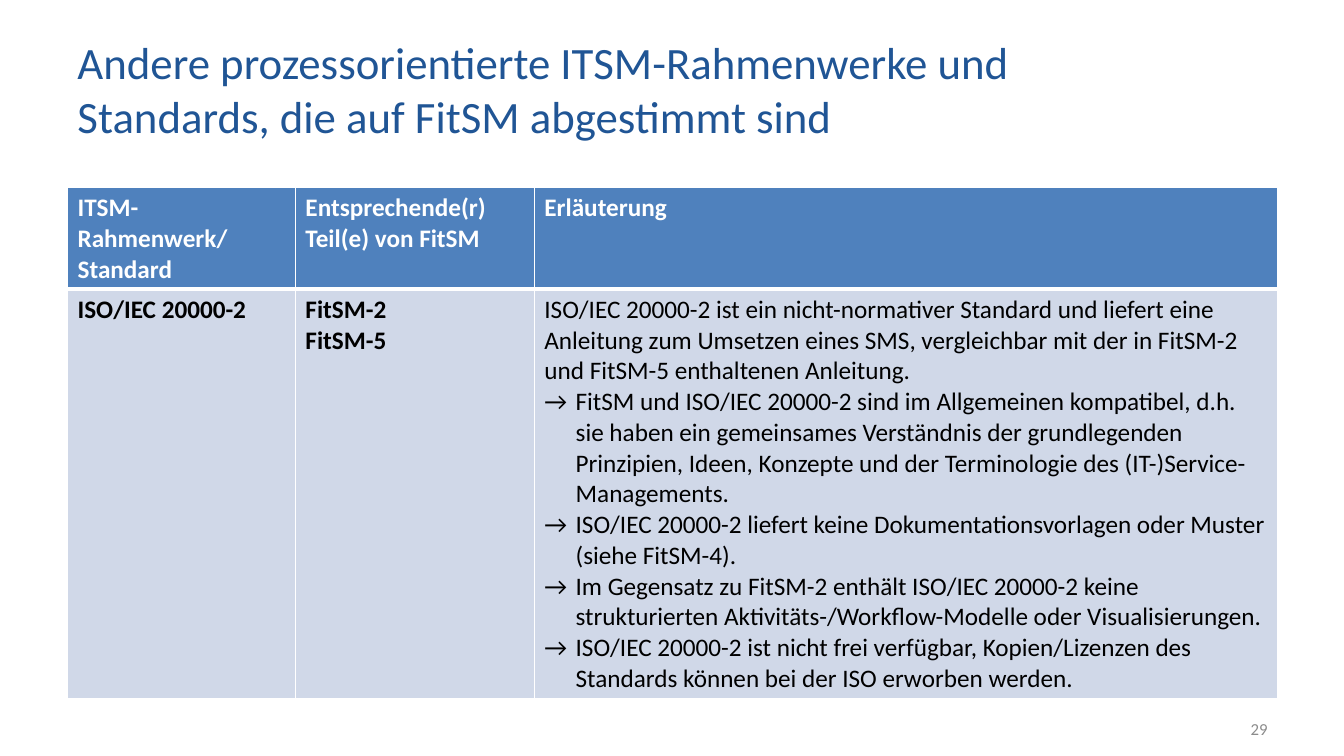
from lxml.etree import SubElement
from pptx import Presentation
from pptx.dml.color import RGBColor
from pptx.enum.text import MSO_ANCHOR, PP_ALIGN
from pptx.oxml.ns import qn
from pptx.util import Inches, Pt

TITLE = "Andere prozessorientierte ITSM-Rahmenwerke und Standards, die auf FitSM abgestimmt sind"
PAGE_NUMBER = "29"
ARROW = "→"
HEADINGS = ["ITSM-Rahmenwerk/Standard", "Entsprechende(r) Teil(e) von FitSM", "Erläuterung"]
STANDARD = ["ISO/IEC 20000-2"]
PARTS = ["FitSM-2", "FitSM-5"]
INTRO = "ISO/IEC 20000-2 ist ein nicht-normativer Standard und liefert eine Anleitung zum Umsetzen eines SMS, vergleichbar mit der in FitSM-2 und FitSM-5 enthaltenen Anleitung."
POINTS = [
    "FitSM und ISO/IEC 20000-2 sind im Allgemeinen kompatibel, d.h. sie haben ein gemeinsames Verständnis der grundlegenden Prinzipien, Ideen, Konzepte und der Terminologie des (IT-)Service-Managements.",
    "ISO/IEC 20000-2 liefert keine Dokumentationsvorlagen oder Muster (siehe FitSM-4).",
    "Im Gegensatz zu FitSM-2 enthält ISO/IEC 20000-2 keine strukturierten Aktivitäts-/Workflow-Modelle oder Visualisierungen.",
    "ISO/IEC 20000-2 ist nicht frei verfügbar, Kopien/Lizenzen des Standards können bei der ISO erworben werden.",
]
ROWS = [[[heading] for heading in HEADINGS], [STANDARD, PARTS, [INTRO, *POINTS]]]

THEME = {
    "font": "Calibri",
    "title": {"size": 32, "color": "205595"},
    "header": {"size": 18, "color": "FFFFFF", "bold": True},
    "key": {"size": 18, "color": "000000", "bold": True},
    "body": {"size": 18, "color": "000000", "bold": False},
    "number": {"size": 12, "color": "8C8C8C"},
    "fills": ["4F81BD", "D0D8E8"],
    "border": "FFFFFF",
    "thin": 1,
    "thick": 3,
}

WIDTH, HEIGHT = 13.33, 7.5
MARGIN = 0.67
COLUMNS = [2.26, 2.37, 7.37]
ROW_HEIGHTS = [1.01, 4.06]
TABLE_TOP = 1.86
INDENT = 0.31


def style(para, look):
    formats = {"name": THEME["font"], "size": Pt(look["size"]), "bold": look.get("bold", False)}
    for span in para.runs:
        for key, value in formats.items():
            setattr(span.font, key, value)
        span.font.color.rgb = RGBColor.from_string(look["color"])


def add_text(page, place, text, look, align):
    box = page.shapes.add_textbox(*map(Inches, place))
    frame = box.text_frame
    frame.word_wrap = True
    frame.vertical_anchor = MSO_ANCHOR.MIDDLE
    para = frame.paragraphs[0]
    para.text = text
    para.alignment = align
    style(para, look)


def add_arrow_bullet(para):
    properties = para._p.get_or_add_pPr()
    properties.set("marL", str(Inches(INDENT)))
    properties.set("indent", str(-Inches(INDENT)))
    SubElement(properties, qn("a:buFont"), typeface=THEME["font"])
    SubElement(properties, qn("a:buChar"), char=ARROW)


def add_borders(cell, widths):
    properties = cell._tc.get_or_add_tcPr()
    for side, width in widths.items():
        line = SubElement(properties, qn(f"a:ln{side}"), w=str(Pt(width)))
        fill = SubElement(line, qn("a:solidFill"))
        SubElement(fill, qn("a:srgbClr"), val=THEME["border"])


def fill_cell(cell, lines, row, column):
    widths = dict.fromkeys("LRTB", THEME["thin"])
    widths["T" if row else "B"] = THEME["thick"]
    add_borders(cell, widths)
    cell.fill.solid()
    cell.fill.fore_color.rgb = RGBColor.from_string(THEME["fills"][row])
    look = THEME["header" if row == 0 else "body" if column == 2 else "key"]
    frame = cell.text_frame
    for index, line in enumerate(lines):
        para = frame.add_paragraph() if index else frame.paragraphs[0]
        para.text = line
        if line in POINTS:
            add_arrow_bullet(para)
        style(para, look)


def add_framework_table(page):
    place = (MARGIN, TABLE_TOP, sum(COLUMNS), sum(ROW_HEIGHTS))
    table = page.shapes.add_table(len(ROWS), len(COLUMNS), *map(Inches, place)).table
    for column, width in zip(table.columns, COLUMNS):
        column.width = Inches(width)
    for row, height in zip(table.rows, ROW_HEIGHTS):
        row.height = Inches(height)
    for row, cells in enumerate(ROWS):
        for column, lines in enumerate(cells):
            fill_cell(table.cell(row, column), lines, row, column)


def main():
    deck = Presentation()
    deck.slide_width, deck.slide_height = Inches(WIDTH), Inches(HEIGHT)
    page = deck.slides.add_slide(deck.slide_layouts[6])
    add_text(page, (MARGIN, 0.3, 9.91, 1.15), TITLE, THEME["title"], PP_ALIGN.LEFT)
    add_framework_table(page)
    number_width = 3.11
    number_left = MARGIN + sum(COLUMNS) - number_width
    add_text(page, (number_left, 7.03, number_width, 0.4), PAGE_NUMBER, THEME["number"], PP_ALIGN.RIGHT)
    deck.save("out.pptx")


if __name__ == "__main__":
    main()
